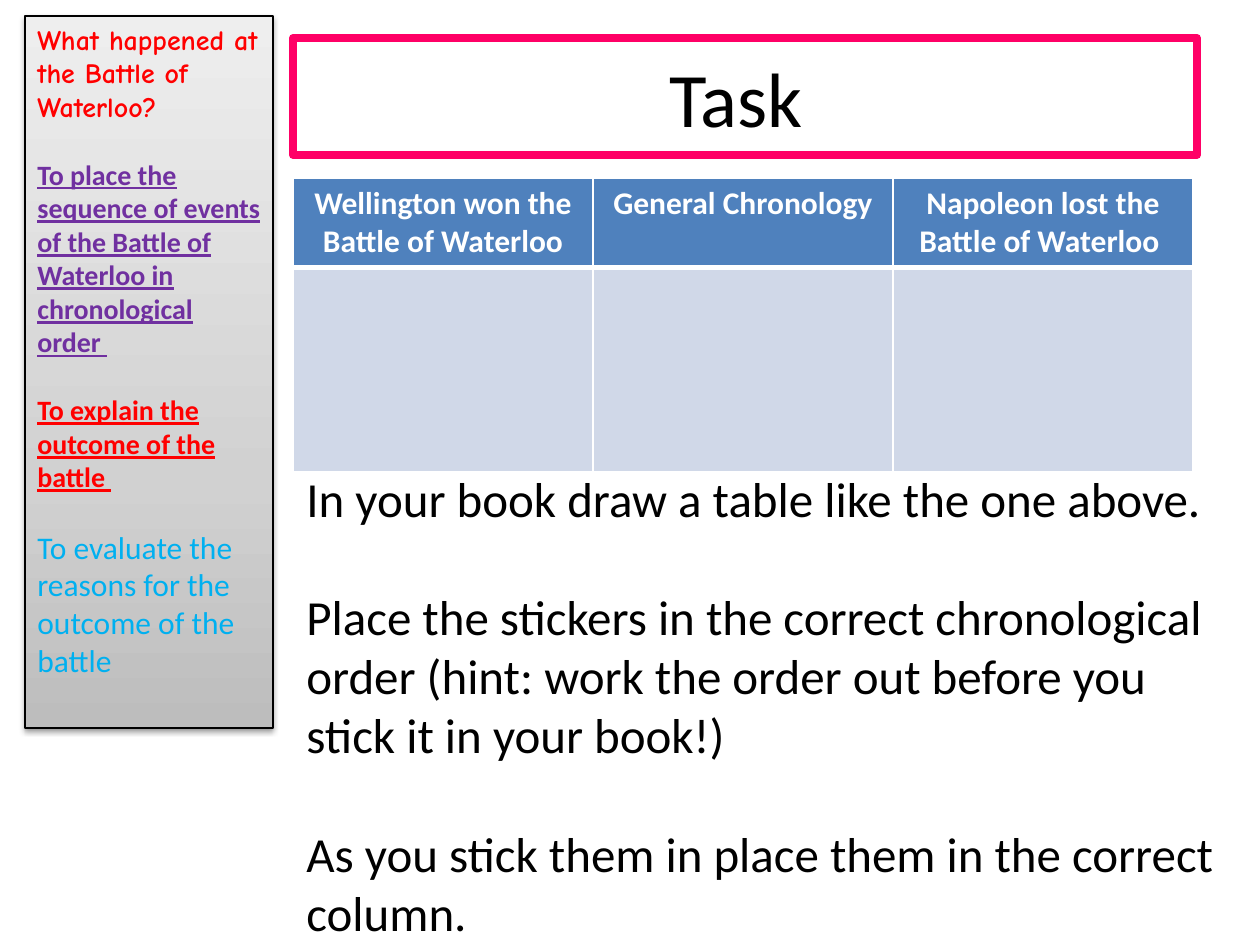
from dataclasses import dataclass

from lxml import etree
from pptx import Presentation
from pptx.dml.color import RGBColor
from pptx.enum.shapes import MSO_SHAPE
from pptx.enum.text import MSO_ANCHOR, MSO_AUTO_SIZE, PP_ALIGN
from pptx.oxml.ns import qn
from pptx.util import Emu, Pt

RECT = MSO_SHAPE.RECTANGLE
TOP, MIDDLE = MSO_ANCHOR.TOP, MSO_ANCHOR.MIDDLE
LEFT, CENTER = PP_ALIGN.LEFT, PP_ALIGN.CENTER
GROW, FIXED = MSO_AUTO_SIZE.SHAPE_TO_FIT_TEXT, MSO_AUTO_SIZE.NONE
EMU_PX = 914400 / 126


@dataclass(frozen=True)
class Theme:
    black: str = "000000"
    white: str = "FFFFFF"
    pink: str = "FF0066"
    head: str = "4F81BD"
    body: str = "D0D8E8"
    red: str = "FF0000"
    purple: str = "7030A0"
    sky: str = "00B0F0"
    grays: tuple = ((0, "BDBDBD"), (35, "D1D1D1"), (100, "EEEEEE"))
    font: str = "Calibri"
    comic: str = "Comic Neue"
    title: int = 44
    task: int = 28
    large: int = 18
    small: int = 16


T = Theme()


@dataclass(frozen=True)
class Para:
    text: str
    size: int
    color: str = T.black
    font: str = T.font
    bold: bool = False
    under: bool = False
    align: PP_ALIGN = LEFT
    gap: float = 0


def px(n: int) -> Emu:
    return Emu(round(n * EMU_PX))


def box(x: int, y: int, w: int, h: int) -> tuple:
    return px(x), px(y), px(w), px(h)


def rgb(color: str) -> RGBColor:
    return RGBColor.from_string(color)


def write(frame, paras: list[Para]) -> None:
    for i, item in enumerate(paras):
        para = frame.add_paragraph() if i else frame.paragraphs[0]
        para.text, para.alignment = item.text, item.align
        para.space_before = Pt(item.gap)
        font = para.font
        font.name, font.size = item.font, Pt(item.size)
        font.bold, font.underline = item.bold, item.under
        font.color.rgb = rgb(item.color)


def tint(node, color: str):
    return etree.SubElement(node, qn("a:srgbClr"), val=color)


def shade(shape, stops: tuple) -> None:
    shape.fill.gradient()
    shape.fill.gradient_angle = 90
    group = shape._element.spPr.find(".//" + qn("a:gsLst"))
    for old in list(group):
        group.remove(old)
    for pos, color in stops:
        tint(etree.SubElement(group, qn("a:gs"), pos=str(pos * 1000)), color)


def drop(shape) -> None:
    shape.shadow.inherit = False
    effects = shape._element.spPr.find(qn("a:effectLst"))
    cast = etree.SubElement(
        effects, qn("a:outerShdw"), blurRad=str(Pt(3.1)), dist=str(Pt(1.6)),
        dir="5400000", rotWithShape="0")
    etree.SubElement(tint(cast, T.black), qn("a:alpha"), val="38000")


def edge(cell, top: int, bottom: int) -> None:
    props = cell._tc.get_or_add_tcPr()
    for side, width in (("L", 1), ("R", 1), ("T", top), ("B", bottom)):
        line = etree.SubElement(props, qn("a:ln" + side), w=str(Pt(width)))
        tint(etree.SubElement(line, qn("a:solidFill")), T.white)


def add_grid(slide, heads: list[str]) -> None:
    col, rows = 300, (88, 204)
    grid = slide.shapes.add_table(
        len(rows), len(heads), *box(293, 178, col * len(heads), sum(rows))).table
    for row, high in zip(grid.rows, rows):
        row.height = px(high)
    for c, text in enumerate(heads):
        grid.columns[c].width = px(col)
        looks = ((text, T.head, 1, 3), ("", T.body, 3, 1))
        for r, (label, color, top, bottom) in enumerate(looks):
            cell = grid.cell(r, c)
            edge(cell, top, bottom)
            cell.fill.solid()
            cell.fill.fore_color.rgb = rgb(color)
            write(cell.text_frame, [
                Para(label, T.large, T.white, bold=True, align=CENTER)])


def add_title(slide) -> None:
    title = slide.shapes.title
    title.left, title.top, title.width, title.height = box(293, 38, 904, 117)
    title.line.color.rgb = rgb(T.pink)
    title.line.width = Pt(4.5)
    title.text_frame.vertical_anchor = MIDDLE
    write(title.text_frame, [Para("Task ", T.title, align=CENTER)])


def add_steps(slide, steps: list[str]) -> None:
    frame = slide.shapes.add_textbox(*box(294, 462, 937, 488)).text_frame
    frame.word_wrap, frame.auto_size = True, GROW
    write(frame, [Para(step, T.task, gap=34.2 if i else 0)
                  for i, step in enumerate(steps)])


def add_aims(slide, aims: list[Para]) -> None:
    panel = slide.shapes.add_shape(RECT, *box(25, 16, 248, 712))
    shade(panel, T.grays)
    panel.line.color.rgb = rgb(T.black)
    panel.line.width = Pt(0.75)
    drop(panel)
    frame = panel.text_frame
    frame.word_wrap, frame.auto_size = True, FIXED
    frame.vertical_anchor = TOP
    write(frame, aims)


def main() -> None:
    deck = Presentation()
    deck.slide_width, deck.slide_height = px(1260), px(945)
    slide = deck.slides.add_slide(deck.slide_layouts[5])

    # Heading and sorting table
    add_title(slide)
    add_grid(slide, [
        "Wellington won the Battle of Waterloo",
        "General Chronology",
        "Napoleon lost the Battle of Waterloo ",
    ])

    # Instructions
    add_steps(slide, [
        "In your book draw a table like the one above.",
        "Place the stickers in the correct chronological order "
        "(hint: work the order out before you stick it in your book!)",
        "As you stick them in place them in the correct column.",
    ])

    # Question and aims at the side
    gap = 19.5
    add_aims(slide, [
        Para("What happened at the Battle of Waterloo?", T.small, T.red,
             T.comic, bold=True),
        Para("To place the sequence of events of the Battle of Waterloo in "
             "chronological order ", T.small, T.purple, bold=True, under=True,
             gap=gap),
        Para("To explain the outcome of the battle ", T.small, T.red,
             bold=True, under=True, gap=gap),
        Para("To evaluate the reasons for the outcome of the battle", T.large,
             T.sky, gap=gap),
    ])

    deck.save("out.pptx")


if __name__ == "__main__":
    main()
